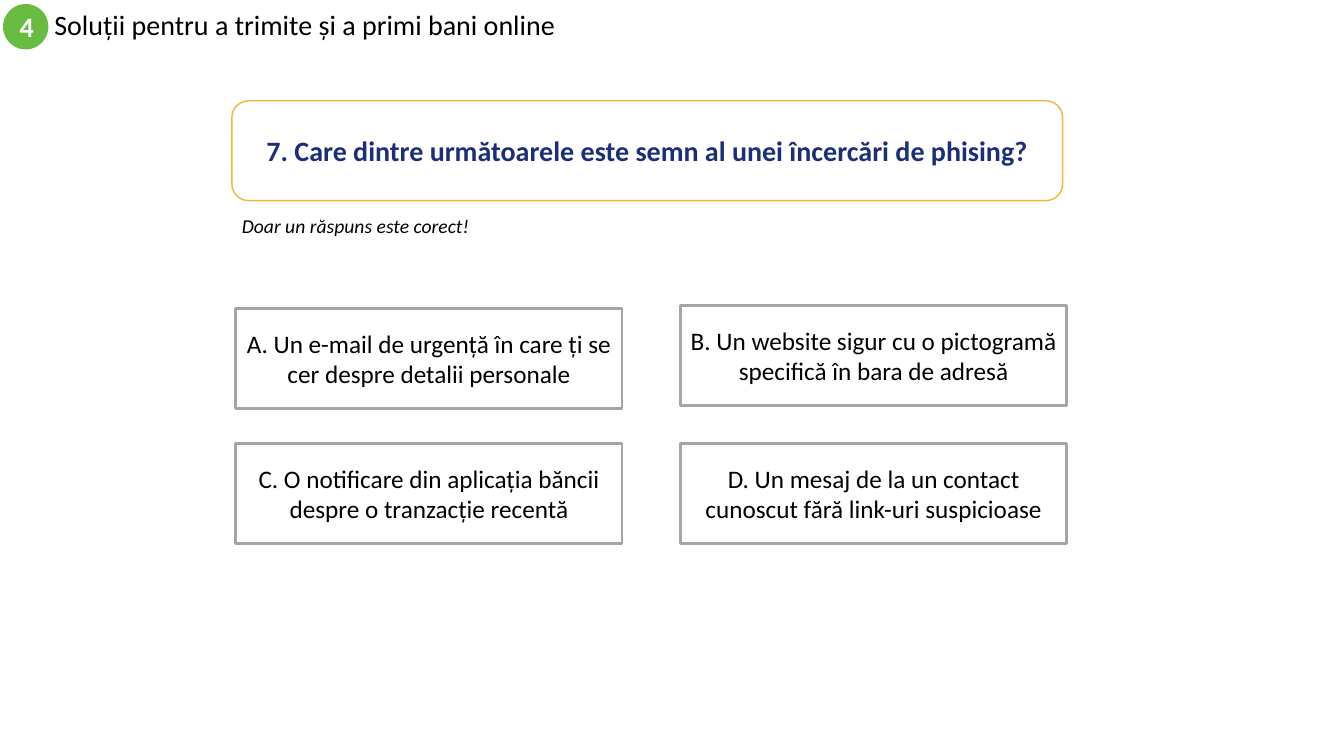
from pptx import Presentation
from pptx.dml.color import RGBColor
from pptx.enum.shapes import MSO_SHAPE as SHAPE
from pptx.enum.text import MSO_ANCHOR as ANCHOR, PP_ALIGN as ALIGN
from pptx.util import Emu, Pt

NUMBER = "4"
TITLE = "Soluții pentru a trimite și a primi bani online"
QUESTION = "7. Care dintre următoarele este semn al unei încercări de phising?"
HINT = "Doar un răspuns este corect!"
ANSWERS = [
    "A. Un e-mail de urgență în care ți se cer despre detalii personale",
    "B. Un website sigur cu o pictogramă specifică în bara de adresă",
    "C. O notificare din aplicația băncii despre o tranzacție recentă",
    "D. Un mesaj de la un contact cunoscut fără link-uri suspicioase",
]

PX = 9144  # 100 px to the inch
COLUMNS = (234, 675)
ROWS = ((306, 303), (440, 440))  # top of the left and right answer
ANSWER_SIZE = (383, 99)


def color(value):
    return RGBColor.from_string(value)


def emu(box):
    return [Emu(n * PX) for n in box]


def write(s, text, align, anchor, **font):
    tf = s.text_frame
    tf.word_wrap = True
    tf.vertical_anchor = anchor
    p = tf.paragraphs[0]
    p.alignment = align
    r = p.add_run()
    r.text = text
    r.font.color.rgb = color(font.pop("ink", "000000"))
    for name, value in {"name": "Calibri", **font}.items():
        setattr(r.font, name, value)
    return p


def add_box(shapes, kind, box, text, fill="FFFFFF", line=None, width=1, **font):
    s = shapes.add_shape(kind, *emu(box))
    s.shadow.inherit = False
    s.fill.solid()
    s.fill.fore_color.rgb = color(fill)
    if line:
        s.line.color.rgb = color(line)
        s.line.width = Pt(width)
    else:
        s.line.fill.background()
    write(s, text, ALIGN.CENTER, ANCHOR.MIDDLE, **font)


def add_label(shapes, box, text, anchor, **font):
    s = shapes.add_textbox(*emu(box))
    return write(s, text, ALIGN.LEFT, anchor, **font)


prs = Presentation()
prs.slide_width, prs.slide_height = emu((1333, 750))
shapes = prs.slides.add_slide(prs.slide_layouts[6]).shapes

add_box(shapes, SHAPE.OVAL, (3, 4, 45, 45), NUMBER, fill="68BC42",
        size=Pt(20), bold=True, ink="FFFFFF")
title = add_label(shapes, (44, 4, 800, 45), TITLE, ANCHOR.MIDDLE, size=Pt(20))
title.line_spacing = 0.9
add_box(shapes, SHAPE.ROUNDED_RECTANGLE, (230, 100, 824, 99), QUESTION,
        line="FCB13A", size=Pt(20), bold=True, ink="1C2E78")
add_label(shapes, (230, 207, 282, 34), HINT, ANCHOR.TOP, size=Pt(14), italic=True)

for i, answer in enumerate(ANSWERS):
    row, col = divmod(i, len(COLUMNS))
    add_box(shapes, SHAPE.RECTANGLE, (COLUMNS[col], ROWS[row][col], *ANSWER_SIZE),
            answer, line="A5A5A5", width=2, size=Pt(18))

prs.save("out.pptx")
